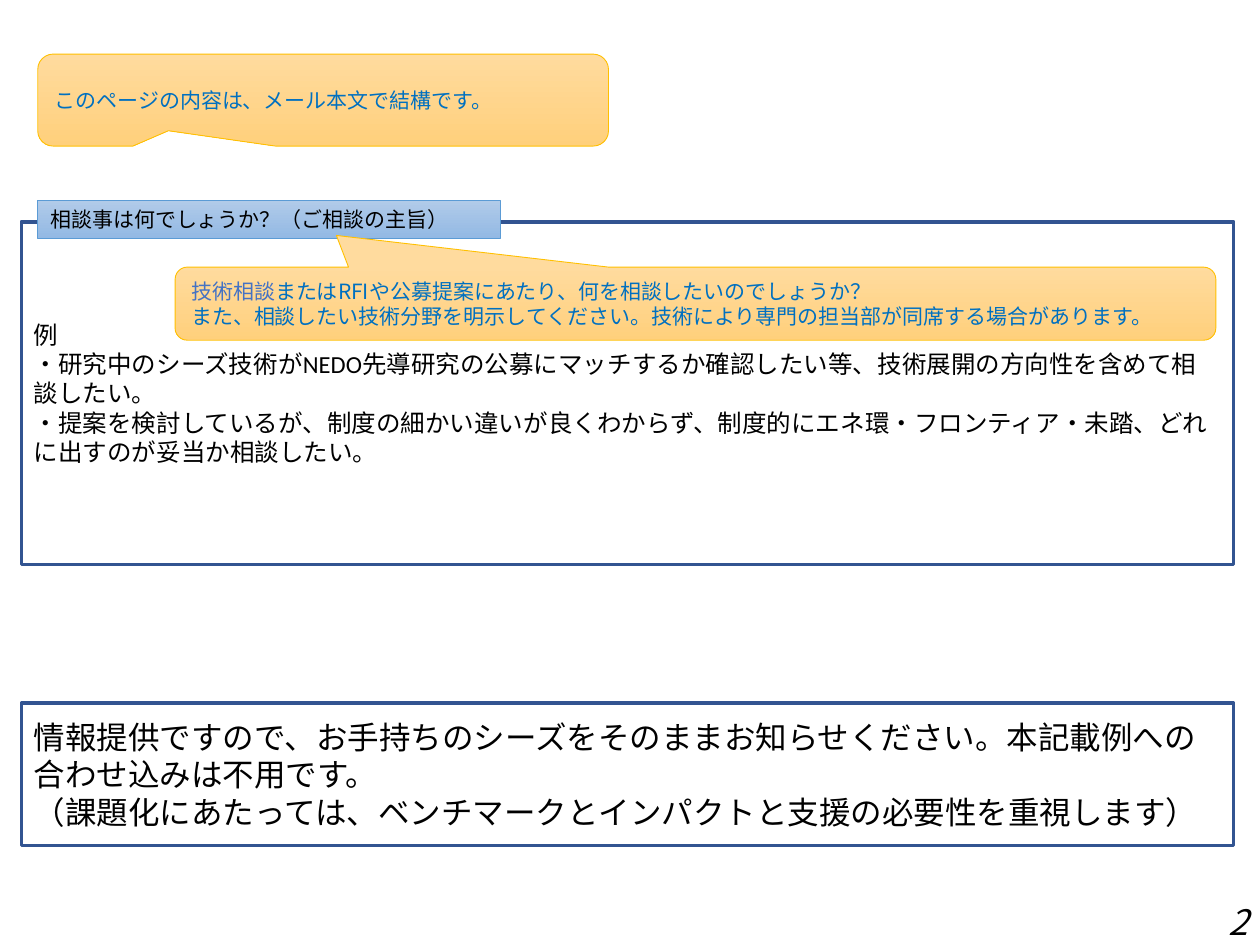
from pptx import Presentation
from pptx.dml.color import RGBColor
from pptx.enum.shapes import MSO_SHAPE
from pptx.enum.text import MSO_ANCHOR, PP_ALIGN
from pptx.oxml.ns import qn
from pptx.util import Inches, Pt
from lxml.etree import SubElement

NOTO, CALIBRI = "Noto Sans CJK JP", "Calibri"
BLACK, BLUE, INDIGO = "000000", "0070C0", "4472C4"
ORANGE = ("FFDB9E", "FFD07C")
PALE_BLUE = ("B1CBE9", "93B9E4")
FRAME_X, FRAME_W, TAG_X = 0.17, 9.62, 0.3

EXAMPLES = [
    "例",
    "・研究中のシーズ技術がNEDO先導研究の公募にマッチするか確認したい等、技術展開の方向性を含めて相談したい。",
    "・提案を検討しているが、制度の細かい違いが良くわからず、制度的にエネ環・フロンティア・未踏、どれに出すのが妥当か相談したい。",
]
HEADING = ["相談事は何でしょうか？（ご相談の主旨）"]
GUIDANCE = [
    [("技術相談", INDIGO), ("またはRFIや公募提案にあたり、何を相談したいのでしょうか？", BLUE)],
    "また、相談したい技術分野を明示してください。技術により専門の担当部が同席する場合があります。",
]
MAIL_NOTE = ["このページの内容は、メール本文で結構です。"]
REQUEST = [
    "情報提供ですので、お手持ちのシーズをそのままお知らせください。本記載例への合わせ込みは不用です。",
    "（課題化にあたっては、ベンチマークとインパクトと支援の必要性を重視します）",
]


def rgb(color):
    return RGBColor.from_string(color)


def write(sp, paragraphs, size=12, font=NOTO, color=BLACK, italic=None,
          align=PP_ALIGN.LEFT, anchor=MSO_ANCHOR.MIDDLE):
    tf = sp.text_frame
    tf.word_wrap = True
    tf.vertical_anchor = anchor
    for i, runs in enumerate(paragraphs):
        p = tf.paragraphs[0] if i == 0 else tf.add_paragraph()
        p.alignment = align
        for text, run_color in [(runs, color)] if isinstance(runs, str) else runs:
            r = p.add_run()
            r.text = text
            r.font.size = Pt(size)
            r.font.name = font
            r.font.italic = italic
            r.font.color.rgb = rgb(run_color)
            SubElement(r.font._element, qn("a:ea")).set("typeface", font)


def add_box(s, kind, at, line, width, gradient=None, adjustments=()):
    sp = s.shapes.add_shape(kind, *map(Inches, at))
    sp.shadow.inherit = False
    sp.line.color.rgb = rgb(line)
    sp.line.width = Pt(width)
    if gradient:
        sp.fill.gradient()
        sp.fill.gradient_angle = 270
        for stop, color in zip(sp.fill.gradient_stops, gradient):
            stop.color.rgb = rgb(color)
    else:
        sp.fill.background()
    for i, value in enumerate(adjustments):
        sp.adjustments[i] = value
    return sp


def add_frame(s, top, height):
    return add_box(s, MSO_SHAPE.RECTANGLE, (FRAME_X, top, FRAME_W, height), "325491", 2)


def add_callout(s, at, tip):
    return add_box(s, MSO_SHAPE.ROUNDED_RECTANGULAR_CALLOUT, at, "FFC000", 0.5,
                   ORANGE, (*tip, 0.167))


prs = Presentation()
prs.slide_width, prs.slide_height = Inches(10), Inches(7.5)
s = prs.slides.add_slide(prs.slide_layouts[6])

write(add_frame(s, 1.76, 2.72), EXAMPLES, size=14, font=CALIBRI)
heading = add_box(s, MSO_SHAPE.RECTANGLE, (TAG_X, 1.59, 3.67, 0.3), "5B9BD5", 0.5, PALE_BLUE)
write(heading, HEADING, anchor=MSO_ANCHOR.TOP)
write(add_callout(s, (1.39, 2.12, 8.26, 0.58), (-0.345, -0.934)), GUIDANCE, color=BLUE)
write(add_callout(s, (TAG_X, 0.43, 4.53, 0.73), (-0.271, 0.333)), MAIL_NOTE,
      color=BLUE, align=PP_ALIGN.JUSTIFY)
number = s.shapes.add_textbox(*map(Inches, (9.65, 7.1, 0.34, 0.4)))
write(number, ["2"], size=20, italic=True, anchor=MSO_ANCHOR.TOP)
write(add_frame(s, 5.58, 1.13), REQUEST, size=18, font=CALIBRI)

prs.save("out.pptx")
